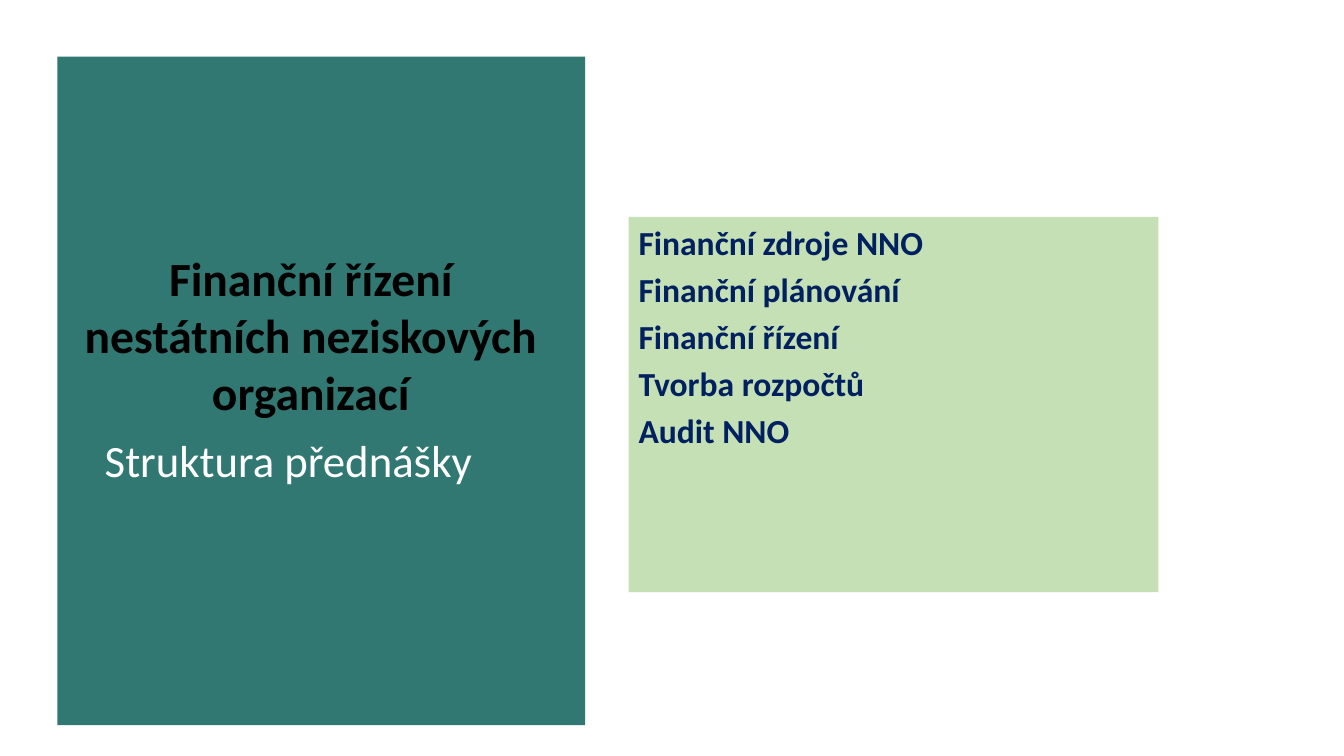
from pptx import Presentation
from pptx.dml.color import RGBColor
from pptx.enum.shapes import MSO_SHAPE
from pptx.enum.text import MSO_ANCHOR, MSO_AUTO_SIZE, PP_ALIGN
from pptx.util import Pt

RECTANGLE = MSO_SHAPE.RECTANGLE
TOP = MSO_ANCHOR.TOP
NO_AUTOSIZE = MSO_AUTO_SIZE.NONE
LEFT = PP_ALIGN.LEFT
CENTER = PP_ALIGN.CENTER

TEAL = "307871"
GREEN = "C5E0B4"
NAVY = "002060"
BLACK = "000000"
WHITE = "FFFFFF"

TOPICS = [
    "Finanční zdroje NNO",
    "Finanční plánování",
    "Finanční řízení",
    "Tvorba rozpočtů",
    "Audit NNO",
]


def color(value):
    return RGBColor.from_string(value)


def write_text(shape, lines, size, fill, bold=False, align=LEFT, gap=0):
    frame = shape.text_frame
    frame.word_wrap = True
    frame.auto_size = NO_AUTOSIZE
    frame.vertical_anchor = TOP
    frame.margin_left = frame.margin_right = Pt(7.2)
    frame.margin_top = frame.margin_bottom = Pt(3.6)
    for index, line in enumerate(lines):
        paragraph = frame.paragraphs[0] if index == 0 else frame.add_paragraph()
        paragraph.alignment = align
        paragraph.line_spacing = 1.0
        paragraph.space_before = Pt(gap if index else 0)
        run = paragraph.add_run()
        run.text = line
        run.font.name = "Calibri"
        run.font.size = Pt(size)
        run.font.bold = bold
        run.font.color.rgb = color(fill)


def add_panel(slide, left, top, width, height, fill):
    shape = slide.shapes.add_shape(RECTANGLE, Pt(left), Pt(top), Pt(width), Pt(height))
    shape.shadow.inherit = False
    shape.fill.solid()
    shape.fill.fore_color.rgb = color(fill)
    shape.line.fill.background()
    return shape


def add_title_panel(slide, left, top, width, height):
    panel = add_panel(slide, left, top, width, height, TEAL)
    title = slide.shapes.title
    panel.element.addnext(title.element)
    title.left, title.top = Pt(left + 11.5), Pt(top + 134)
    title.width, title.height = Pt(width - 38), Pt(132)
    write_text(title, ["Finanční řízení nestátních neziskových organizací"],
               size=34, fill=BLACK, bold=True, align=CENTER)
    subtitle = slide.shapes.add_textbox(
        Pt(left + 26.7), Pt(top + 265), Pt(width - 93), Pt(46))
    write_text(subtitle, ["Struktura přednášky"], size=32, fill=WHITE)


def add_topics_panel(slide, left, top, width, height):
    panel = add_panel(slide, left, top, width, height, GREEN)
    write_text(panel, TOPICS, size=24, fill=NAVY, bold=True, gap=4.8)


def main():
    presentation = Presentation()
    presentation.slide_width = Pt(960)
    presentation.slide_height = Pt(540)
    slide = presentation.slides.add_slide(presentation.slide_layouts[5])
    add_title_panel(slide, 41, 40.4, 377, 477.5)
    add_topics_panel(slide, 449, 155, 378.5, 268)
    presentation.save("out.pptx")


if __name__ == "__main__":
    main()
